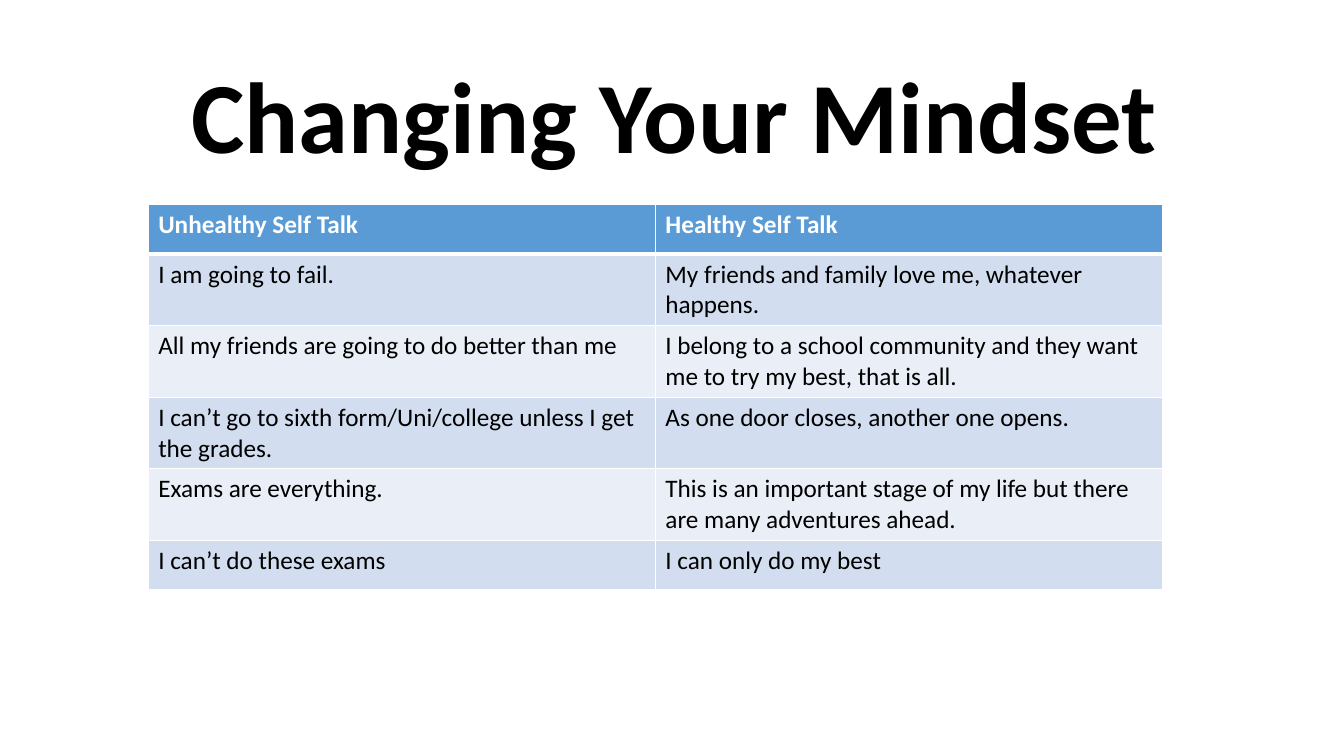
import pptx
import pptx.util
import pptx.dml.color
import pptx.enum.text
import pptx.oxml
import pptx.oxml.ns
from pptx.util import Inches, Pt

RGBColor = pptx.dml.color.RGBColor

# Content
TITLE = "Changing Your Mindset"
ROWS = [
    ("Unhealthy Self Talk", "Healthy Self Talk"),
    ("I am going to fail.", "My friends and family love me, whatever happens."),
    ("All my friends are going to do better than me",
     "I belong to a school community and they want me to try my best, that is all."),
    ("I can’t go to sixth form/Uni/college unless I get the grades.",
     "As one door closes, another one opens."),
    ("Exams are everything.",
     "This is an important stage of my life but there are many adventures ahead."),
    ("I can’t do these exams", "I can only do my best"),
]

# Style
FONT = "Calibri"
BLACK = RGBColor(0x00, 0x00, 0x00)
WHITE = RGBColor(0xFF, 0xFF, 0xFF)
HEADER = RGBColor(0x5B, 0x9B, 0xD5)
BANDS = (RGBColor(0xEA, 0xEF, 0xF7), RGBColor(0xD2, 0xDE, 0xEF))

# Grid, in inches
LEFT, TOP, COL_W = 1.47, 2.03, 5.03
ONE_LINE, TWO_LINES = 0.49, 0.71
HEIGHTS = [ONE_LINE] + [TWO_LINES] * (len(ROWS) - 2) + [ONE_LINE]


def add_run(p, text, size, color, bold):
    r = p.add_run()
    r.text = text
    r.font.name = FONT
    r.font.size = Pt(size)
    r.font.bold = bold
    r.font.color.rgb = color


def set_borders(cell, widths):
    """Draw solid white borders; they precede the fill in the cell properties."""
    tc_pr = cell._tc.get_or_add_tcPr()
    for i, (side, width) in enumerate(widths.items()):
        tc_pr.insert(i, pptx.oxml.parse_xml(
            f'<a:{side} {pptx.oxml.ns.nsdecls("a")} w="{Pt(width)}">'
            f'<a:solidFill><a:srgbClr val="{WHITE}"/></a:solidFill></a:{side}>'))


prs = pptx.Presentation()
prs.slide_width, prs.slide_height = Inches(13.33), Inches(7.5)
s = prs.slides.add_slide(prs.slide_layouts[5])

# Title
title = s.shapes.title
title.left, title.top = Inches(0.94), Inches(0.47)
title.width, title.height = Inches(11.5), Inches(1.45)
tf = title.text_frame
tf.auto_size = pptx.enum.text.MSO_AUTO_SIZE.NONE
tf.vertical_anchor = pptx.enum.text.MSO_ANCHOR.MIDDLE
p = tf.paragraphs[0]
p.alignment = pptx.enum.text.PP_ALIGN.CENTER
p.line_spacing = 0.9
add_run(p, TITLE, 72, BLACK, True)

# Table
table = s.shapes.add_table(
    len(ROWS), len(ROWS[0]), Inches(LEFT), Inches(TOP),
    Inches(COL_W * len(ROWS[0])), Inches(sum(HEIGHTS))).table
for col in table.columns:
    col.width = Inches(COL_W)
for i, (texts, height) in enumerate(zip(ROWS, HEIGHTS)):
    is_header = i == 0
    table.rows[i].height = Inches(height)
    for j, text in enumerate(texts):
        cell = table.cell(i, j)
        cell.fill.solid()
        cell.fill.fore_color.rgb = HEADER if is_header else BANDS[i % 2]
        add_run(cell.text_frame.paragraphs[0], text, 18,
                WHITE if is_header else BLACK, is_header)
        set_borders(cell, {"lnL": 1, "lnR": 1, "lnT": 3 if i == 1 else 1,
                           "lnB": 3 if is_header else 1})

prs.save("out.pptx")
